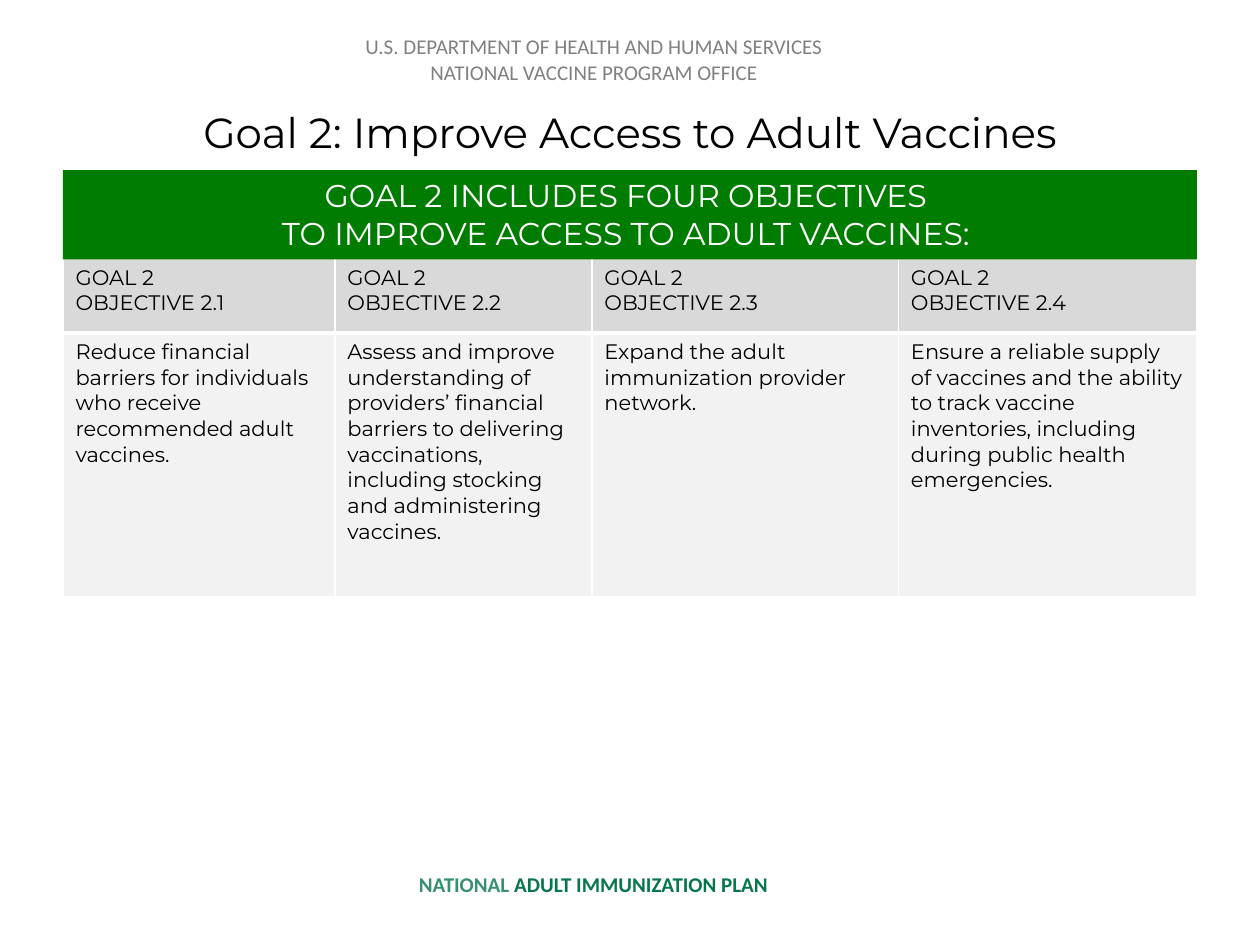
import pptx
import pptx.util
import pptx.dml.color
import pptx.enum.shapes
import pptx.enum.text
import pptx.oxml
import pptx.oxml.ns

Cm, Pt = pptx.util.Cm, pptx.util.Pt
ALIGN = pptx.enum.text.PP_ALIGN
ANCHOR = pptx.enum.text.MSO_ANCHOR

HUES = {
    "black": "000000", "white": "FFFFFF", "gray": "808080",
    "head": "D9D9D9", "body": "F2F2F2", "green": "007D00",
    "mint": "379070", "pine": "07764C",
}


def hue(name):
    return pptx.dml.color.RGBColor.from_string(HUES[name])


class Deck:
    """Holds the text style and the current slide."""

    font = "Montserrat"

    def __init__(self, wide, high):
        self.prs = pptx.Presentation()
        self.prs.slide_width, self.prs.slide_height = Cm(wide), Cm(high)
        self.slide = self.prs.slides.add_slide(self.prs.slide_layouts[6])

    def fill_text(self, frame, lines, size, font=None, align=ALIGN.CENTER):
        """Each line is a list of (text, colour, bold) runs."""
        frame.word_wrap = True
        for i, line in enumerate(lines):
            para = frame.paragraphs[0] if i == 0 else frame.add_paragraph()
            para.alignment = align
            for text, color, bold in line:
                run = para.add_run()
                run.text = text
                form = {"name": font or self.font, "size": Pt(size), "bold": bold}
                for key, value in form.items():
                    setattr(run.font, key, value)
                run.font.color.rgb = hue(color)

    def label(self, box, lines, size, font=None, anchor=ANCHOR.TOP):
        shape = self.slide.shapes.add_textbox(*map(Cm, box))
        self.fill_text(shape.text_frame, lines, size, font)
        shape.text_frame.vertical_anchor = anchor

    def banner(self, box, lines, size, fill):
        kind = pptx.enum.shapes.MSO_SHAPE.RECTANGLE
        shape = self.slide.shapes.add_shape(kind, *map(Cm, box))
        shape.shadow.inherit = False
        shape.fill.solid()
        shape.fill.fore_color.rgb = hue(fill)
        shape.line.fill.background()
        self.fill_text(shape.text_frame, lines, size)
        shape.text_frame.vertical_anchor = ANCHOR.TOP

    def edge(self, cell, widths):
        """Draw white borders with the given widths in points."""
        props = cell._tc.get_or_add_tcPr()
        for i, (side, width) in enumerate(widths.items()):
            props.insert(i, pptx.oxml.parse_xml(
                f'<a:{side} {pptx.oxml.ns.nsdecls("a")} w="{Pt(width)}">'
                f'<a:solidFill><a:srgbClr val="{HUES["white"]}"/></a:solidFill>'
                f'</a:{side}>'))

    def table(self, box, cols, rows, data, fills, rims, size):
        grid = self.slide.shapes.add_table(
            len(rows), len(cols), *map(Cm, box)).table
        for col, width in zip(grid.columns, cols):
            col.width = Cm(width)
        for row, high, texts, fill, rim in zip(grid.rows, rows, data, fills, rims):
            row.height = Cm(high)
            for cell, lines in zip(row.cells, texts):
                cell.fill.solid()
                cell.fill.fore_color.rgb = hue(fill)
                self.edge(cell, rim)
                runs = [[(text, "black", False)] for text in lines]
                self.fill_text(cell.text_frame, runs, size, align=ALIGN.LEFT)


def main():
    deck = Deck(25.4, 19.05)

    # Footer and agency header
    deck.label((6.43, 17.45, 11.07, 0.76),
               [[("NATIONAL ", "mint", True),
                 ("ADULT IMMUNIZATION PLAN", "pine", True)]], 12, "Calibri")
    deck.label((5.36, 0.56, 13.23, 1.27),
               [[("U.S. DEPARTMENT OF HEALTH AND HUMAN SERVICES", "gray", False)],
                [("NATIONAL VACCINE PROGRAM OFFICE", "gray", False)]],
               12, "Calibri")

    # Objectives table
    goals = [
        "Reduce financial barriers for individuals who receive "
        "recommended adult vaccines.",
        "Assess and improve understanding of providers’ financial barriers to "
        "delivering vaccinations, including stocking and administering vaccines.",
        "Expand the adult immunization provider network.",
        "Ensure a reliable supply of vaccines and the ability to track vaccine "
        "inventories, including during public health emergencies.",
    ]
    heads = [["GOAL 2", f"OBJECTIVE 2.{n}"] for n in range(1, len(goals) + 1)]
    thin = {"lnL": 1, "lnR": 1, "lnT": 1, "lnB": 1}
    deck.table((1.27, 5.21, 22.86, 6.82), [5.48, 5.18, 6.18, 6.02], [1.5, 5.32],
               [heads, [[goal] for goal in goals]], ["head", "body"],
               [{**thin, "lnB": 3}, {**thin, "lnT": 3}], 12)

    # Green banner
    deck.banner((1.27, 3.43, 22.86, 1.8),
                [[("GOAL 2 INCLUDES FOUR OBJECTIVES ", "white", False)],
                 [("TO IMPROVE ACCESS TO ADULT VACCINES: ", "white", False)]],
                18, "green")

    # Title
    deck.label((1.27, 1.78, 22.86, 1.75),
               [[("Goal 2: Improve Access to Adult Vaccines", "black", False)]],
               24, anchor=ANCHOR.MIDDLE)

    deck.prs.save("out.pptx")


if __name__ == "__main__":
    main()
